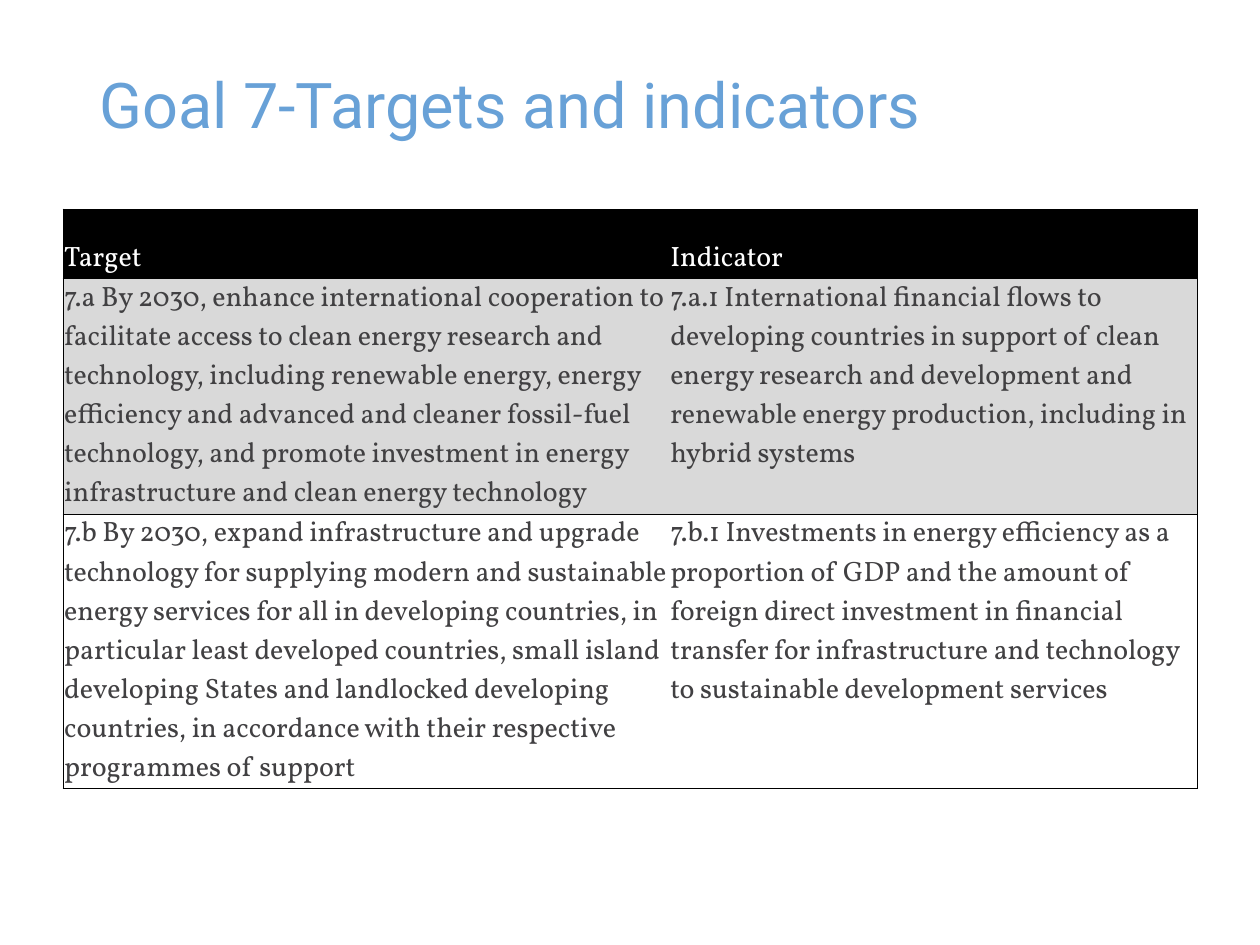
from typing import NamedTuple

from lxml import etree
from pptx import Presentation
from pptx.dml.color import RGBColor
from pptx.enum import text
from pptx.oxml import ns
from pptx.util import Inches, Pt


class Row(NamedTuple):
    height: float
    fill: str | None
    color: str
    anchor: text.MSO_ANCHOR
    cells: tuple[str, str]


TOP, BOTTOM = text.MSO_ANCHOR.TOP, text.MSO_ANCHOR.BOTTOM
WIDTHS = (4.81, 4.19)
ROWS = (
    Row(0.55, "000000", "FFFFFF", BOTTOM, ("Target", "Indicator")),
    Row(1.87, "D9D9D9", "414042", TOP, (
        "7.a By 2030, enhance international cooperation to facilitate access "
        "to clean energy research and technology, including renewable energy, "
        "energy efficiency and advanced and cleaner fossil-fuel technology, "
        "and promote investment in energy infrastructure and clean energy "
        "technology",
        "7.a.1 International financial flows to developing countries in "
        "support of clean energy research and development and renewable "
        "energy production, including in hybrid systems")),
    Row(2.18, None, "414042", TOP, (
        "7.b By 2030, expand infrastructure and upgrade\n"
        "technology for supplying modern and sustainable energy services for "
        "all in developing countries, in particular least developed "
        "countries, small island developing States and landlocked developing "
        "countries, in accordance with their respective programmes of support",
        "7.b.1 Investments in energy efficiency as a\n"
        "proportion of GDP and the amount of foreign direct investment in "
        "financial transfer for infrastructure and technology to sustainable "
        "development services")),
)


def rgb(code: str) -> RGBColor:
    return RGBColor.from_string(code)


def style(para, name: str, size: float, color: str) -> None:
    font = para.font
    font.name, font.size, font.bold = name, Pt(size), False
    font.color.rgb = rgb(color)


def border(cell, sides: str) -> None:
    """Draw thin black lines on the named sides and clear the others."""
    props = cell._tc.get_or_add_tcPr()
    for i, side in enumerate("LRTB"):
        line = etree.Element(ns.qn(f"a:ln{side}"), w=str(Pt(0.5)))
        if side in sides:
            fill = etree.SubElement(line, ns.qn("a:solidFill"))
            etree.SubElement(fill, ns.qn("a:srgbClr"), val="000000")
        else:
            etree.SubElement(line, ns.qn("a:noFill"))
        props.insert(i, line)


def fill_cell(cell, words: str, row: Row, sides: str) -> None:
    cell.text = words
    cell.vertical_anchor = row.anchor
    cell.margin_left = cell.margin_right = cell.margin_top = Inches(0.01)
    cell.margin_bottom = 0
    if row.fill:
        cell.fill.solid()
        cell.fill.fore_color.rgb = rgb(row.fill)
    else:
        cell.fill.background()
    for para in cell.text_frame.paragraphs:
        style(para, "Vollkorn", 16, row.color)
    border(cell, sides)


def add_title(slide) -> None:
    box = slide.shapes.add_textbox(
        Inches(0.69), Inches(0.53), Inches(7.5), Inches(0.65))
    frame = box.text_frame
    frame.word_wrap = True
    frame.vertical_anchor = BOTTOM
    para = frame.paragraphs[0]
    para.text = "Goal 7-Targets and indicators"
    para.line_spacing = 0.9
    style(para, "Roboto", 36, "68A1D7")


def add_goals(slide) -> None:
    height = Inches(sum(row.height for row in ROWS))
    table = slide.shapes.add_table(
        len(ROWS), len(WIDTHS), Inches(0.5), Inches(1.66), Inches(9),
        height).table
    table.first_row = table.horz_banding = False
    for col, width in zip(table.columns, WIDTHS):
        col.width = Inches(width)
    for r, row in enumerate(ROWS):
        table.rows[r].height = Inches(row.height)
        for c, (words, sides) in enumerate(zip(row.cells, ("LTB", "RTB"))):
            fill_cell(table.cell(r, c), words, row, sides)


def main() -> None:
    deck = Presentation()
    deck.slide_width, deck.slide_height = Inches(10), Inches(7.5)
    slide = deck.slides.add_slide(deck.slide_layouts[6])
    add_title(slide)
    add_goals(slide)
    deck.save("out.pptx")


if __name__ == "__main__":
    main()
